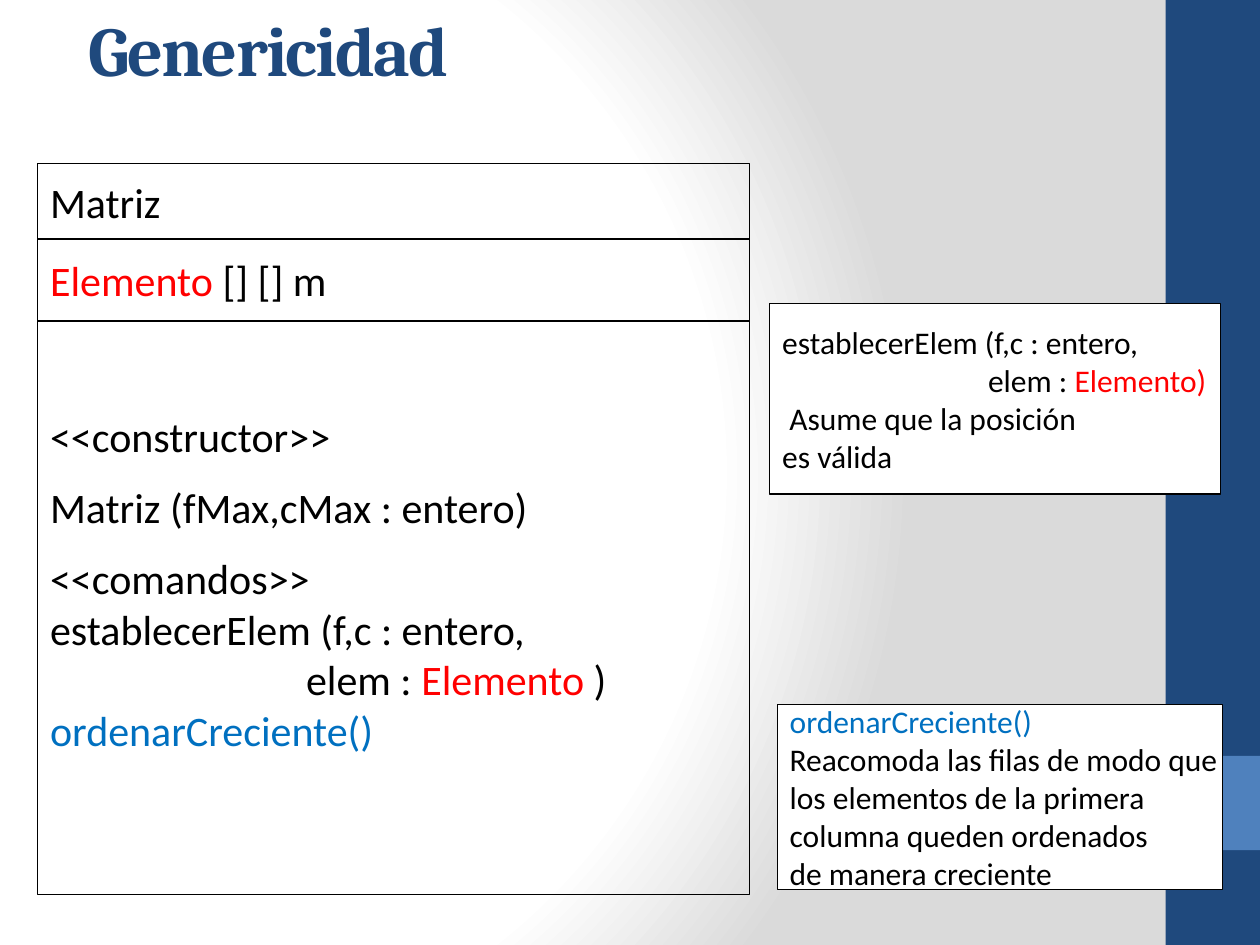
"""Builds the slide on genericity with the Matriz class diagram and its two notes."""
from dataclasses import dataclass

from pptx import Presentation
from pptx.dml.color import RGBColor
from pptx.enum.shapes import MSO_SHAPE
from pptx.enum.text import MSO_ANCHOR, PP_ALIGN
from pptx.oxml import parse_xml
from pptx.util import Cm, Pt


@dataclass(frozen=True)
class Theme:
    navy: str = "1F497D"
    blue: str = "4F81BD"
    black: str = "000000"
    white: str = "FFFFFF"
    grey: str = "DADADA"
    red: str = "FF0000"
    command: str = "0070C0"
    heading_font: str = "Cambria"
    body_font: str = "Calibri"
    title_size: int = 40
    class_size: int = 24
    note_size: int = 18
    paragraph_gap: int = 12
    line_width: float = 0.75


THEME = Theme()
BLACK, RED, COMMAND = THEME.black, THEME.red, THEME.command

TITLE = "Genericidad"


def line(*spans, indent=0, gap=0):
    """Describes one paragraph: (text, colour) spans, left indent in cm, gap above in points."""
    return {"spans": spans, "indent": indent, "gap": gap}


CLASS_SECTIONS = [
    {"height": 1.52, "top_inset": None, "lines": [line(("Matriz", BLACK))]},
    {"height": 1.65, "top_inset": None,
     "lines": [line(("Elemento", RED), (" [] [] m", BLACK))]},
    {"height": 11.56, "top_inset": 1.8, "lines": [
        line(("<<constructor>>", BLACK)),
        line(("Matriz (fMax,cMax : entero)", BLACK), gap=THEME.paragraph_gap),
        line(("<<comandos>>", BLACK), gap=THEME.paragraph_gap),
        line(("establecerElem (f,c : entero,", BLACK)),
        line(("elem : ", BLACK), ("Elemento", RED), (" )", BLACK), indent=5.16),
        line(("ordenarCreciente()", COMMAND)),
    ]},
]

NOTES = [
    {"place": (15.52, 6.12, 9.09, 3.84), "lines": [
        line(("establecerElem (f,c : entero,", BLACK)),
        line(("elem : ", BLACK), ("Elemento)", RED), indent=4.15),
        line((" Asume que la posición", BLACK)),
        line(("es válida", BLACK)),
    ]},
    {"place": (15.67, 14.2, 8.97, 3.73), "lines": [
        line(("ordenarCreciente()", COMMAND)),
        line(("Reacomoda las filas de modo que", BLACK)),
        line(("los elementos de la primera", BLACK)),
        line(("columna queden ordenados", BLACK)),
        line(("de manera creciente", BLACK)),
    ]},
]

BANDS = [((23.5, 0, 1.9, 19.05), THEME.navy), ((23.5, 15.24, 1.9, 1.9), THEME.blue)]
CLASS_LEFT, CLASS_TOP, CLASS_WIDTH = 0.76, 3.3, 14.35


def paint_background(page):
    page.background.fill.solid()
    properties = page.background._cSld.bg.bgPr
    stops = [(0, THEME.white), (75, THEME.white), (100, THEME.grey)]
    stop_xml = "".join(
        f'<a:gs pos="{position * 1000}"><a:srgbClr val="{colour}"/></a:gs>'
        for position, colour in stops
    )
    gradient = parse_xml(
        '<a:gradFill xmlns:a="http://schemas.openxmlformats.org/drawingml/2006/main"'
        f' rotWithShape="1"><a:gsLst>{stop_xml}</a:gsLst><a:path path="circle">'
        '<a:fillToRect l="20000" t="50000" r="100000" b="50000"/></a:path></a:gradFill>'
    )
    properties.replace(properties[0], gradient)


def add_box(page, place, fill=None, outline=None):
    box = page.shapes.add_shape(MSO_SHAPE.RECTANGLE, *map(Cm, place))
    box.shadow.inherit = False
    if fill:
        box.fill.solid()
        box.fill.fore_color.rgb = RGBColor.from_string(fill)
    else:
        box.fill.background()
    if outline:
        box.line.color.rgb = RGBColor.from_string(outline)
        box.line.width = Pt(THEME.line_width)
    else:
        box.line.fill.background()
    return box


def add_span(para, text, colour, font, size):
    span = para.add_run()
    span.text = text
    span.font.name = font
    span.font.size = Pt(size)
    span.font.color.rgb = RGBColor.from_string(colour)
    return span


def write_lines(box, lines, size, top_inset=None):
    frame = box.text_frame
    frame.word_wrap = True
    frame.margin_left = Cm(0.25)
    frame.margin_right = frame.margin_bottom = 0
    frame.margin_top = Cm(top_inset or 0)
    frame.vertical_anchor = MSO_ANCHOR.TOP if top_inset else MSO_ANCHOR.MIDDLE
    for index, content in enumerate(lines):
        para = frame.add_paragraph() if index else frame.paragraphs[0]
        para.alignment = PP_ALIGN.LEFT
        para.space_before = Pt(content["gap"])
        if content["indent"]:
            para._p.get_or_add_pPr().set("marL", str(Cm(content["indent"])))
        for text, colour in content["spans"]:
            add_span(para, text, colour, THEME.body_font, size)


def write_title(page):
    title = page.shapes.title
    title.left, title.top, title.width, title.height = map(Cm, (1.52, 0, 21.16, 3.18))
    frame = title.text_frame
    frame.vertical_anchor = MSO_ANCHOR.TOP
    para = frame.paragraphs[0]
    para.alignment = PP_ALIGN.LEFT
    span = add_span(para, TITLE, THEME.navy, THEME.heading_font, THEME.title_size)
    span.font.bold = True
    span.font._element.set("spc", "-100")


def main():
    deck = Presentation()
    deck.slide_width, deck.slide_height = Cm(25.4), Cm(19.05)
    page = deck.slides.add_slide(deck.slide_layouts[5])
    paint_background(page)
    write_title(page)
    for place, colour in BANDS:
        add_box(page, place, fill=colour)
    top = CLASS_TOP
    for section in CLASS_SECTIONS:
        place = (CLASS_LEFT, top, CLASS_WIDTH, section["height"])
        box = add_box(page, place, outline=THEME.black)
        write_lines(box, section["lines"], THEME.class_size, section["top_inset"])
        top += section["height"]
    for note in NOTES:
        box = add_box(page, note["place"], fill=THEME.white, outline=THEME.black)
        write_lines(box, note["lines"], THEME.note_size)
    deck.save("out.pptx")


if __name__ == "__main__":
    main()
